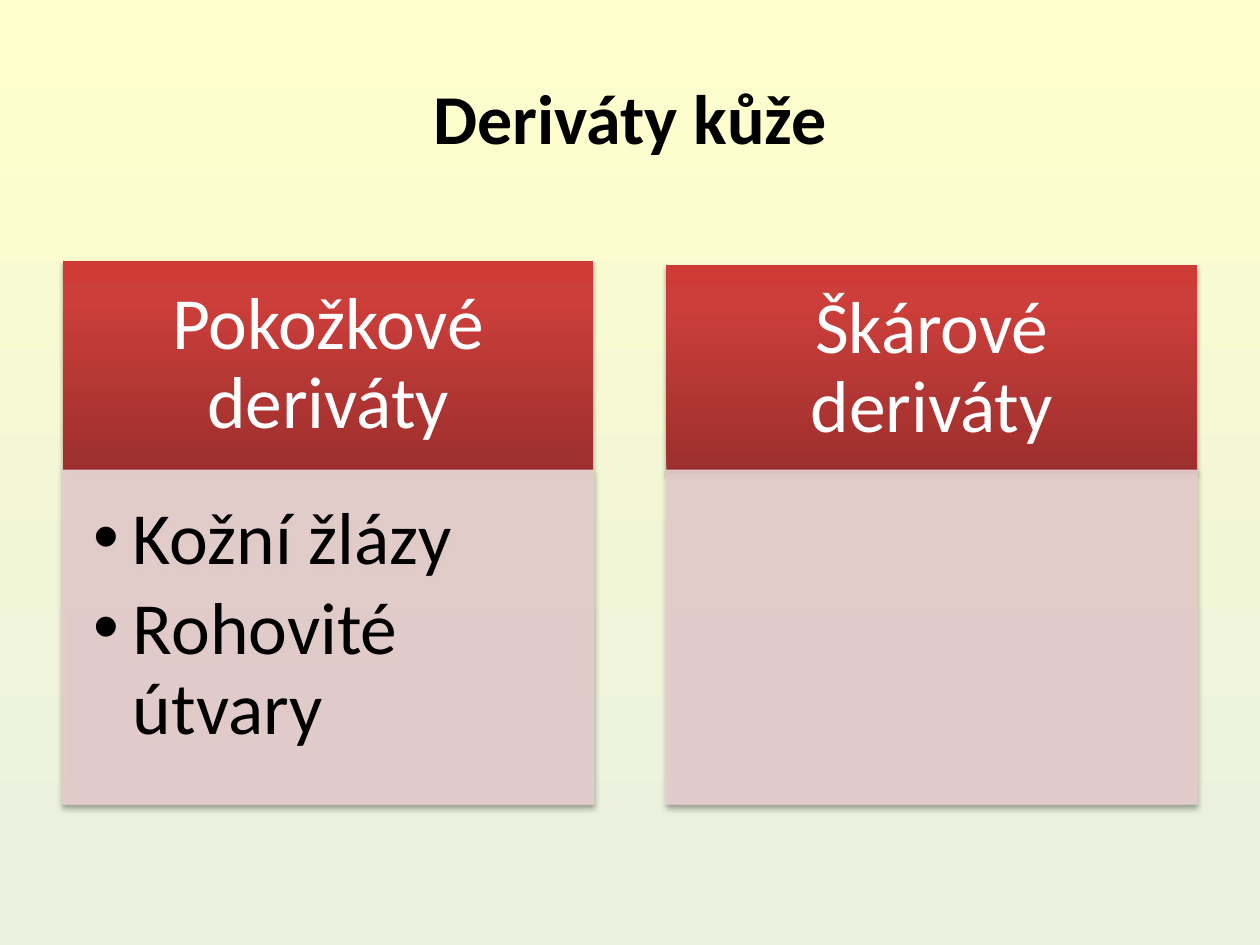
"""Build a slide that sets two groups of skin derivatives side by side."""
from dataclasses import dataclass

from pptx import Presentation
from pptx.dml.color import RGBColor
from pptx.enum.shapes import MSO_SHAPE as Kind
from pptx.enum.text import MSO_ANCHOR as Anchor, PP_ALIGN as Align
from pptx.oxml import parse_xml
from pptx.oxml.ns import nsdecls, qn
from pptx.util import Pt

BLACK = RGBColor(0x00, 0x00, 0x00)
WHITE = RGBColor(0xFF, 0xFF, 0xFF)
CREAM = RGBColor(0xFF, 0xFF, 0xCC)
SAGE = RGBColor(0xEB, 0xF1, 0xDE)
DARK = RGBColor(0x9C, 0x2F, 0x2D)
RED = RGBColor(0xCB, 0x3E, 0x3A)
BRIGHT = RGBColor(0xCE, 0x3B, 0x37)
PINK = RGBColor(0xE8, 0xD0, 0xD0)

FONT = "Calibri"
WIDE, HEAD, BODY = 303.2, 119.4, 190.8
FLOOR = 268.7


@dataclass(frozen=True)
class Card:
    left: float
    top: float
    title: str
    items: tuple[str, ...] = ()


CARDS = (
    Card(36, 149.2, "Pokožkové deriváty", ("Kožní žlázy", "Rohovité útvary")),
    Card(380.8, 151.2, "Škárové deriváty"),
)


def make(tag: str, attrs: str = "", inner: str = ""):
    return parse_xml(f"<a:{tag} {nsdecls('a')} {attrs}>{inner}</a:{tag}>")


def blend(fill, node, stops: tuple, angle: float) -> None:
    fill.gradient()
    fill.gradient_angle = angle
    ramp = next(node.iter(qn("a:gsLst")))
    ramp.clear()
    for spot, color in stops:
        ramp.append(make("gs", f'pos="{spot * 1000}"', f'<a:srgbClr val="{color}"/>'))


def fade(fill) -> None:
    fill.solid()
    fill.fore_color.rgb = PINK


def block(slide, left: float, top: float, high: float):
    shape = slide.shapes.add_shape(Kind.RECTANGLE, Pt(left), Pt(top), Pt(WIDE), Pt(high))
    return shape


def shade(shape) -> None:
    props = shape.element.spPr
    glow = '<a:srgbClr val="000000"><a:alpha val="35000"/></a:srgbClr>'
    attrs = f'blurRad="{Pt(3.1)}" dist="{Pt(1.8)}" dir="5400000" rotWithShape="0"'
    props.append(make("effectLst", "", f"<a:outerShdw {attrs}>{glow}</a:outerShdw>"))


def inset(frame, left: float, top: float, right: float, low: float) -> None:
    frame.word_wrap = True
    frame.margin_left, frame.margin_top = Pt(left), Pt(top)
    frame.margin_right, frame.margin_bottom = Pt(right), Pt(low)


def style(para, size: float, color: RGBColor, bold: bool = False) -> None:
    font = para.font
    font.name, font.size, font.bold = FONT, Pt(size), bold
    font.color.rgb = color


def space(para, after: int) -> None:
    props = para._p.get_or_add_pPr()
    props.append(make("spcAft", "", f'<a:spcPct val="{after * 1000}"/>'))
    para.line_spacing = 0.9


def bullet(para) -> None:
    props = para._p.get_or_add_pPr()
    props.set("marL", str(Pt(22.5)))
    props.set("indent", str(Pt(-22.5)))
    props.append(make("buFont", 'typeface="Arial"'))
    props.append(make("buChar", 'char="•"'))


def header(slide, card: Card) -> None:
    shape = block(slide, card.left, card.top, HEAD)
    blend(shape.fill, shape.element, ((0, DARK), (80, RED), (100, BRIGHT)), 90)
    shape.line.fill.background()
    shade(shape)
    frame = shape.text_frame
    inset(frame, 23.5, 13.5, 23.5, 13.5)
    frame.vertical_anchor = Anchor.MIDDLE
    para = frame.paragraphs[0]
    para.text, para.alignment = card.title, Align.CENTER
    space(para, 35)
    style(para, 42, WHITE)


def panel(slide, card: Card) -> None:
    shape = block(slide, card.left, FLOOR, BODY)
    fade(shape.fill)
    fade(shape.line.fill)
    shape.line.width = Pt(0.75)
    for color in shape.element.spPr.iter(qn("a:srgbClr")):
        color.append(make("alpha", 'val="90000"'))
    shade(shape)
    frame = shape.text_frame
    inset(frame, 17.5, 17.5, 23.5, 26.5)
    frame.vertical_anchor = Anchor.TOP
    for rank, item in enumerate(card.items):
        para = frame.add_paragraph() if rank else frame.paragraphs[0]
        para.text, para.level, para.alignment = item, 1, Align.LEFT
        space(para, 15)
        bullet(para)
        style(para, 42, BLACK)


def title(slide, text: str) -> None:
    frame = slide.shapes.add_textbox(Pt(36), Pt(21.6), Pt(648), Pt(90)).text_frame
    frame.word_wrap = True
    frame.vertical_anchor = Anchor.MIDDLE
    para = frame.paragraphs[0]
    para.text, para.alignment = text, Align.CENTER
    style(para, 40, BLACK, True)


def main() -> None:
    deck = Presentation()
    deck.slide_width, deck.slide_height = Pt(720), Pt(540)
    slide = deck.slides.add_slide(deck.slide_layouts[6])
    blend(slide.background.fill, slide.element, ((0, CREAM), (92, SAGE)), 270)
    title(slide, "Deriváty kůže")
    for card in CARDS:
        header(slide, card)
        panel(slide, card)
    deck.save("out.pptx")


if __name__ == "__main__":
    main()
